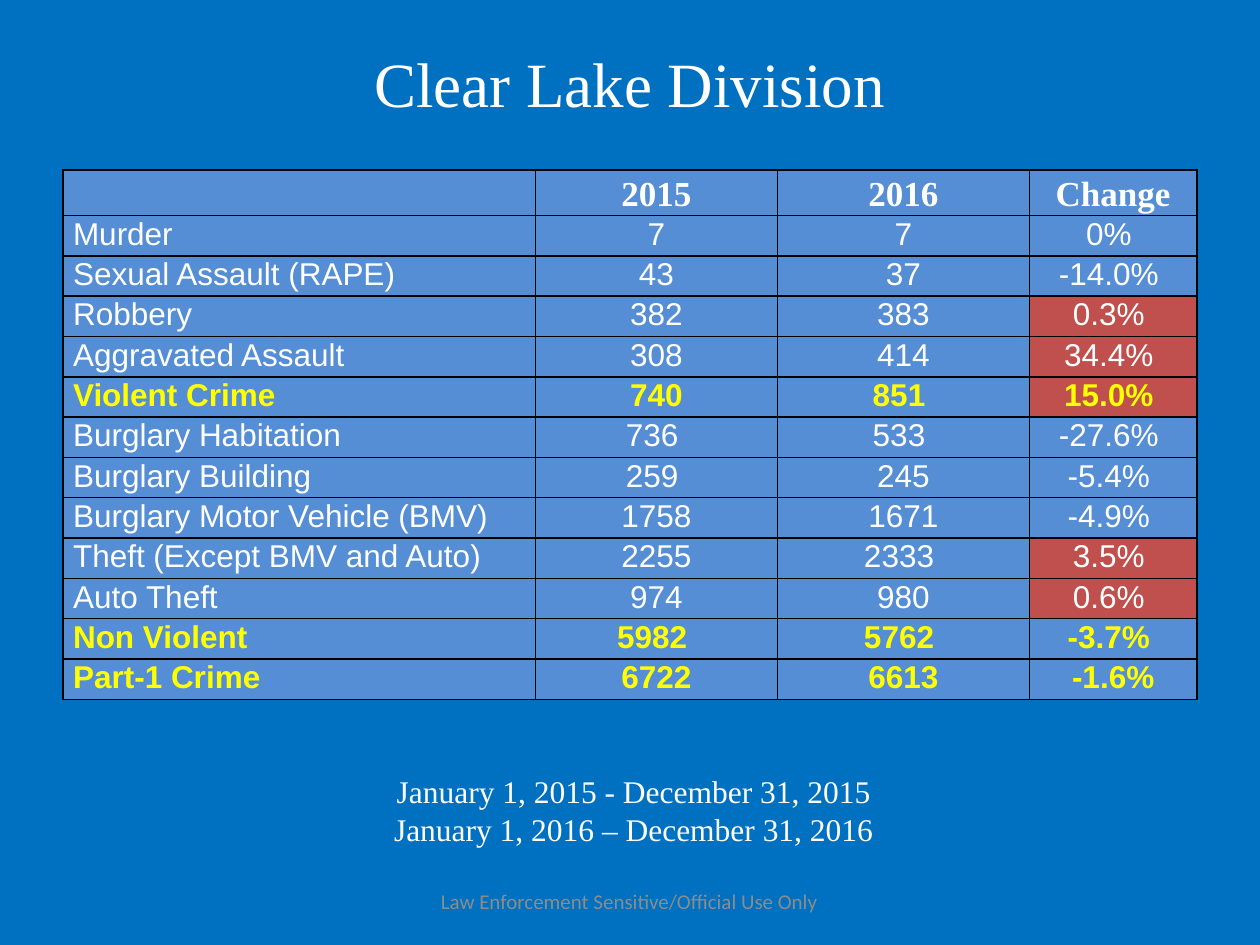
from lxml import etree
from pptx import Presentation
from pptx.dml.color import RGBColor
from pptx.enum.text import MSO_ANCHOR, PP_ALIGN
from pptx.oxml.ns import qn
from pptx.util import Inches, Pt

CENTER, LEFT = PP_ALIGN.CENTER, PP_ALIGN.LEFT
TOP, MIDDLE, BOTTOM = MSO_ANCHOR.TOP, MSO_ANCHOR.MIDDLE, MSO_ANCHOR.BOTTOM

BLUE = RGBColor(0x00, 0x70, 0xC0)
CELL_BLUE = RGBColor(0x55, 0x8E, 0xD5)
RED = RGBColor(0xC0, 0x50, 0x4D)
WHITE = RGBColor(0xFF, 0xFF, 0xFF)
YELLOW = RGBColor(0xFF, 0xFF, 0x00)
GRAY = RGBColor(0x8C, 0x8C, 0x8C)
SERIF, SANS, FOOTER_FONT = "Times New Roman", "Arial", "Calibri"

# Content
TITLE = "Clear Lake Division"
PERIODS = ["January 1, 2015 - December 31, 2015",
           "January 1, 2016 – December 31, 2016"]
FOOTER = "Law Enforcement Sensitive/Official Use Only"
ROWS = [
    ("", "2015", "2016", "Change"),
    ("Murder", "7", "7", "0% "),
    ("Sexual Assault (RAPE)", "43", "37", "-14.0% "),
    ("Robbery", "382", "383", "0.3% "),
    ("Aggravated Assault", "308", "414", "34.4% "),
    ("Violent Crime", "740", "851 ", "15.0% "),
    ("Burglary Habitation", "736 ", "533 ", "-27.6% "),
    ("Burglary Building", "259 ", "245", "-5.4% "),
    ("Burglary Motor Vehicle (BMV)", "1758", "1671", "-4.9% "),
    ("Theft (Except BMV and Auto)", "2255", "2333 ", "3.5% "),
    ("Auto Theft", "974", "980", "0.6% "),
    ("Non Violent", "5982 ", "5762 ", "-3.7% "),
    ("Part-1 Crime", "6722", "6613", "-1.6%"),
]
TOTALS = {"Violent Crime", "Non Violent", "Part-1 Crime"}

# Layout in inches
COL_WIDTHS = [3.75, 1.92, 2, 1.33]
HEADER_H, ROW_H = 0.36, 0.32
TABLE_LEFT, TABLE_TOP = 0.5, 1.35


def style(p, font, size, color, bold=False, align=CENTER):
    p.alignment = align
    for r in p.runs:
        r.font.name, r.font.size, r.font.bold = font, Pt(size), bold
        r.font.color.rgb = color


def add_text(slide, box, lines, font, size, color, anchor=TOP):
    tf = slide.shapes.add_textbox(*map(Inches, box)).text_frame
    tf.word_wrap = True
    tf.vertical_anchor = anchor
    tf.text = "\n".join(lines)
    for p in tf.paragraphs:
        style(p, font, size, color)


def add_borders(cell):
    tc_pr = cell._tc.get_or_add_tcPr()
    for side in ("a:lnL", "a:lnR", "a:lnT", "a:lnB"):
        ln = etree.SubElement(tc_pr, qn(side), w=str(Pt(1)))
        fill = etree.SubElement(ln, qn("a:solidFill"))
        etree.SubElement(fill, qn("a:srgbClr"), val="000000")


def add_crime_table(slide):
    height = HEADER_H + ROW_H * (len(ROWS) - 1)
    table = slide.shapes.add_table(
        len(ROWS), len(COL_WIDTHS), Inches(TABLE_LEFT), Inches(TABLE_TOP),
        Inches(sum(COL_WIDTHS)), Inches(height)).table
    for column, width in zip(table.columns, COL_WIDTHS):
        column.width = Inches(width)
    for i, row in enumerate(ROWS):
        header, total = i == 0, row[0] in TOTALS
        table.rows[i].height = Inches(HEADER_H if header else ROW_H)
        rising = not header and float(row[-1].strip().rstrip("%")) > 0
        for j, text in enumerate(row):
            cell = table.cell(i, j)
            cell.margin_left = cell.margin_right = Inches(0.08)
            cell.margin_top = cell.margin_bottom = Inches(0.01)
            cell.vertical_anchor = BOTTOM if header else TOP
            add_borders(cell)
            cell.fill.solid()
            is_change = j == len(row) - 1
            cell.fill.fore_color.rgb = RED if rising and is_change else CELL_BLUE
            cell.text = text
            style(cell.text_frame.paragraphs[0],
                  SERIF if header else SANS, 20 if header else 18,
                  YELLOW if total else WHITE, header or total,
                  CENTER if j else LEFT)


def main():
    prs = Presentation()
    prs.slide_width, prs.slide_height = Inches(10), Inches(7.5)
    s = prs.slides.add_slide(prs.slide_layouts[6])
    s.background.fill.solid()
    s.background.fill.fore_color.rgb = BLUE

    add_text(s, (3.08, 6.95, 3.83, 0.4), [FOOTER], FOOTER_FONT, 12, GRAY, MIDDLE)
    add_text(s, (2.5, 0.3, 5, 0.71), [TITLE], SERIF, 36, WHITE)
    add_crime_table(s)
    add_text(s, (2.53, 6.08, 5, 0.71), PERIODS, SERIF, 18, WHITE)
    prs.save("out.pptx")


if __name__ == "__main__":
    main()
